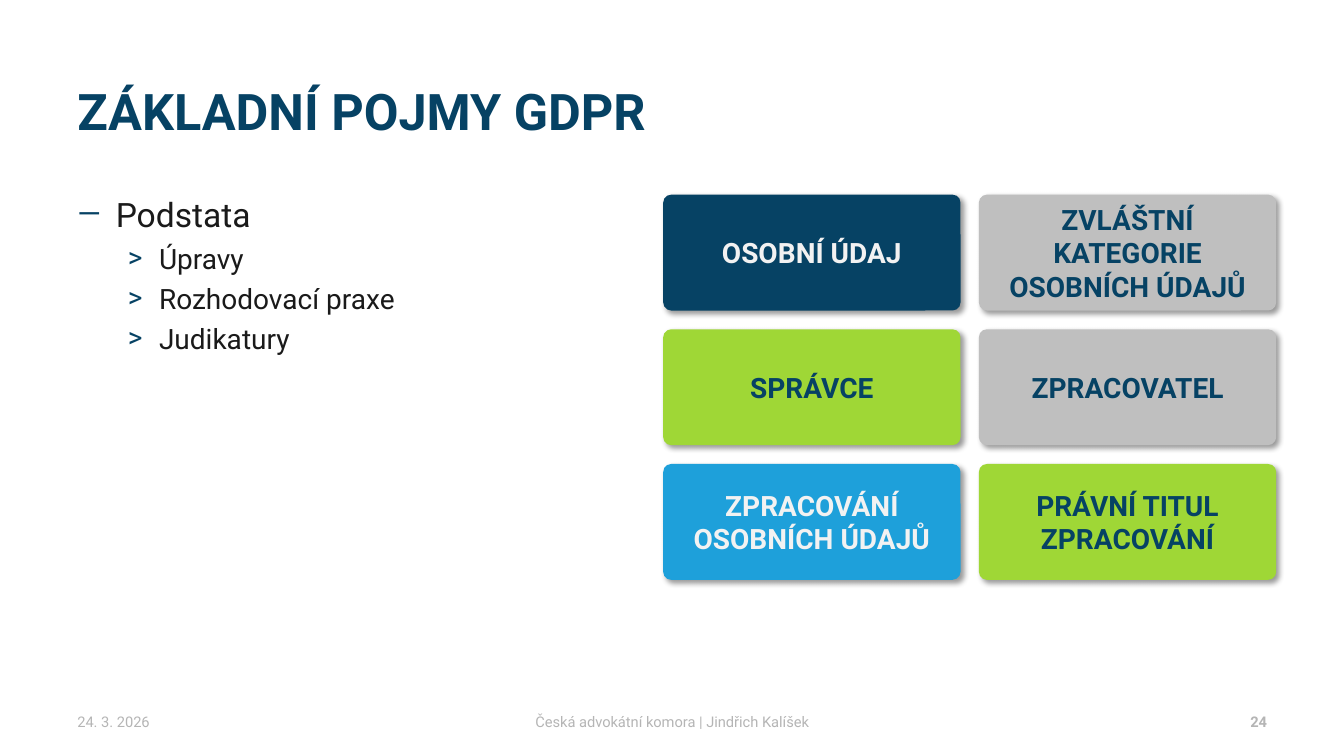
import pptx
import pptx.util
import pptx.dml.color
import pptx.enum.shapes
import pptx.enum.text
import pptx.oxml
import pptx.oxml.ns
import lxml.etree

Pt = pptx.util.Pt
ALIGN = pptx.enum.text.PP_ALIGN
ANCHOR = pptx.enum.text.MSO_ANCHOR

COLORS = {
    "navy": "064264",
    "grey": "BFBFBF",
    "green": "9FD736",
    "blue": "1EA0DA",
    "light": "F2F2F2",
    "body": "1A1A1A",
    "footer": "B5B5B5",
    "shadow": "000000",
}


class SlideBuilder:
    font_name = "Roboto"

    def __init__(self, slide):
        self.slide = slide

    def color(self, name):
        return pptx.dml.color.RGBColor.from_string(COLORS[name])

    def format_para(self, para, size, color, bold=False, align=ALIGN.LEFT):
        para.alignment = align
        for span in para.runs:
            span.font.name = self.font_name
            span.font.size = Pt(size)
            span.font.bold = bold
            span.font.color.rgb = self.color(color)

    def text_box(self, left, top, width, height, anchor=ANCHOR.TOP):
        box = self.slide.shapes.add_textbox(Pt(left), Pt(top), Pt(width), Pt(height))
        frame = box.text_frame
        frame.word_wrap = True
        frame.vertical_anchor = anchor
        return frame

    def title(self, text):
        frame = self.text_box(48.2, 58.3, 864, 62.6)
        frame.margin_top = Pt(5.5)
        frame.text = text
        frame.paragraphs[0].line_spacing = 0.85
        self.format_para(frame.paragraphs[0], 36, "navy", bold=True)

    def footer(self, text, left, width, align, bold=False):
        frame = self.text_box(left, 501.1, width, 28.1, ANCHOR.MIDDLE)
        frame.text = text
        self.format_para(frame.paragraphs[0], 10.5, "footer", bold, align)

    def bullet(self, para, mark, margin, hanging, percent):
        properties = para._p.get_or_add_pPr()
        properties.set("marL", str(Pt(margin)))
        properties.set("indent", str(-Pt(hanging)))
        qn = pptx.oxml.ns.qn
        color = lxml.etree.SubElement(properties, qn("a:buClr"))
        lxml.etree.SubElement(color, qn("a:srgbClr"), val=COLORS["navy"])
        lxml.etree.SubElement(properties, qn("a:buSzPct"), val=str(percent * 1000))
        lxml.etree.SubElement(properties, qn("a:buFont"), typeface=self.font_name)
        lxml.etree.SubElement(properties, qn("a:buChar"), char=mark)

    def bullet_list(self, heading, items):
        frame = self.text_box(48.2, 133.2, 400, 368)
        frame.margin_top = Pt(5.5)
        frame.text = heading
        self.bullet(frame.paragraphs[0], "—", 27.4, 27.4, 90)
        self.format_para(frame.paragraphs[0], 24, "body")
        for item in items:
            para = frame.add_paragraph()
            para.text = item
            para.level = 1
            para.space_before = Pt(4.7)
            self.bullet(para, ">", 58.3, 22.3, 100)
            self.format_para(para, 20, "body")

    def shadow(self, shape):
        namespace = pptx.oxml.ns.nsdecls("a")
        effects = pptx.oxml.parse_xml(
            f'<a:effectLst {namespace}><a:outerShdw blurRad="{Pt(4)}" dist="{Pt(3)}" '
            f'dir="2700000" algn="tl" rotWithShape="0"><a:srgbClr val="{COLORS["shadow"]}">'
            '<a:alpha val="40000"/></a:srgbClr></a:outerShdw></a:effectLst>'
        )
        shape._element.spPr.append(effects)

    def card(self, text, left, top, fill, color):
        card = self.slide.shapes.add_shape(
            pptx.enum.shapes.MSO_SHAPE.ROUNDED_RECTANGLE,
            Pt(left), Pt(top), Pt(212.4), Pt(82.8),
        )
        card.adjustments[0] = 0.07
        card.fill.solid()
        card.fill.fore_color.rgb = self.color(fill)
        card.line.fill.background()
        self.shadow(card)
        frame = card.text_frame
        frame.word_wrap = True
        frame.vertical_anchor = ANCHOR.MIDDLE
        frame.text = text
        self.format_para(frame.paragraphs[0], 20, color, True, ALIGN.CENTER)


def main():
    deck = pptx.Presentation()
    deck.slide_width = Pt(960)
    deck.slide_height = Pt(540)
    page = SlideBuilder(deck.slides.add_slide(deck.slide_layouts[6]))

    page.title("ZÁKLADNÍ POJMY GDPR")
    page.bullet_list("Podstata", ["Úpravy", "Rozhodovací praxe", "Judikatury"])

    cards = [
        ("OSOBNÍ ÚDAJ", "navy", "light"),
        ("ZVLÁŠTNÍ KATEGORIE OSOBNÍCH ÚDAJŮ", "grey", "navy"),
        ("SPRÁVCE", "green", "navy"),
        ("ZPRACOVATEL", "grey", "navy"),
        ("ZPRACOVÁNÍ OSOBNÍCH ÚDAJŮ", "blue", "light"),
        ("PRÁVNÍ TITUL ZPRACOVÁNÍ", "green", "navy"),
    ]
    for index, (text, fill, color) in enumerate(cards):
        row, column = divmod(index, 2)
        page.card(text, 473.7 + column * 225.5, 139 + row * 96.2, fill, color)

    page.footer("24. 3. 2026", 48.2, 224, ALIGN.LEFT)
    page.footer("Česká advokátní komora | Jindřich Kalíšek", 328.3, 303.8, ALIGN.CENTER)
    page.footer("24", 688.2, 224, ALIGN.RIGHT, bold=True)

    deck.save("out.pptx")


if __name__ == "__main__":
    main()
